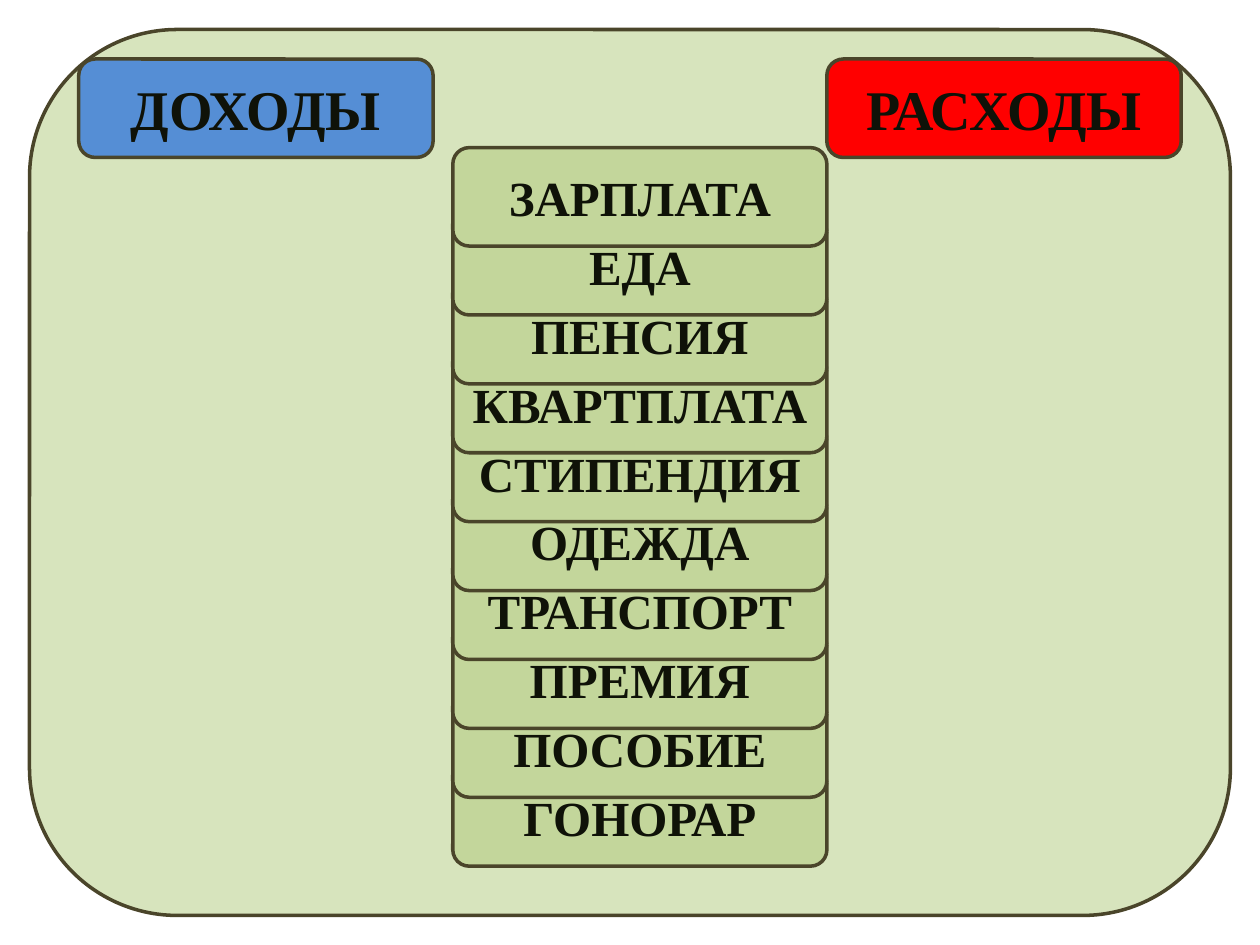
from pptx import Presentation
from pptx.dml.color import RGBColor
from pptx.enum.shapes import MSO_SHAPE
from pptx.enum.text import MSO_ANCHOR, PP_ALIGN
from pptx.util import Inches, Pt

COLORS = {
    "panel": "D7E4BD",
    "card": "C3D69B",
    "income": "558ED5",
    "expense": "FF0000",
    "outline": "4A452A",
    "text": "0F1208",
}
WORDS = ["ЗАРПЛАТА", "ЕДА", "ПЕНСИЯ", "КВАРТПЛАТА", "СТИПЕНДИЯ",
         "ОДЕЖДА", "ТРАНСПОРТ", "ПРЕМИЯ", "ПОСОБИЕ", "ГОНОРАР"]


class SortingPage:
    """Style and current slide; positions are columns and rows of a 64 x 48 grid."""

    font_name = "Times New Roman"
    columns = 64
    box_rows = 5

    def __init__(self, deck):
        self.page = deck.slides.add_slide(deck.slide_layouts[6])
        self.unit = deck.slide_width / self.columns

    def panel(self, column, row, width, height, color):
        area = [round(self.unit * cells) for cells in (column, row, width, height)]
        box = self.page.shapes.add_shape(MSO_SHAPE.ROUNDED_RECTANGLE, *area)
        box.shadow.inherit = False
        box.fill.solid()
        box.fill.fore_color.rgb = RGBColor.from_string(COLORS[color])
        box.line.color.rgb = RGBColor.from_string(COLORS["outline"])
        box.line.width = Pt(2)
        return box

    def label(self, text, column, row, width, color, size):
        box = self.panel(column, row, width, self.box_rows, color)
        box.text_frame.vertical_anchor = MSO_ANCHOR.MIDDLE
        para = box.text_frame.paragraphs[0]
        para.text = text
        para.alignment = PP_ALIGN.CENTER
        para.font.name = self.font_name
        para.font.size = Pt(size)
        para.font.bold = True
        para.font.color.rgb = RGBColor.from_string(COLORS["text"])

    def heading(self, text, column, color):
        self.label(text, column, 3, 18, color, 32)

    def card_stack(self, words, column, top, step):
        # The last card lies at the back, so each card overlaps the one below it
        for index, word in reversed(list(enumerate(words))):
            self.label(word, column, top + index * step, 19, "card", 28)


def main():
    deck = Presentation()
    deck.slide_width, deck.slide_height = Inches(10), Inches(7.5)
    sorting = SortingPage(deck)

    # Background panel
    sorting.panel(1.5, 1.5, 61, 45, "panel")

    # Category headings
    sorting.heading("ДОХОДЫ", 4, "income")
    sorting.heading("РАСХОДЫ", 42, "expense")

    # Cards to sort
    sorting.card_stack(WORDS, column=23, top=7.5, step=3.5)

    deck.save("out.pptx")


if __name__ == "__main__":
    main()
